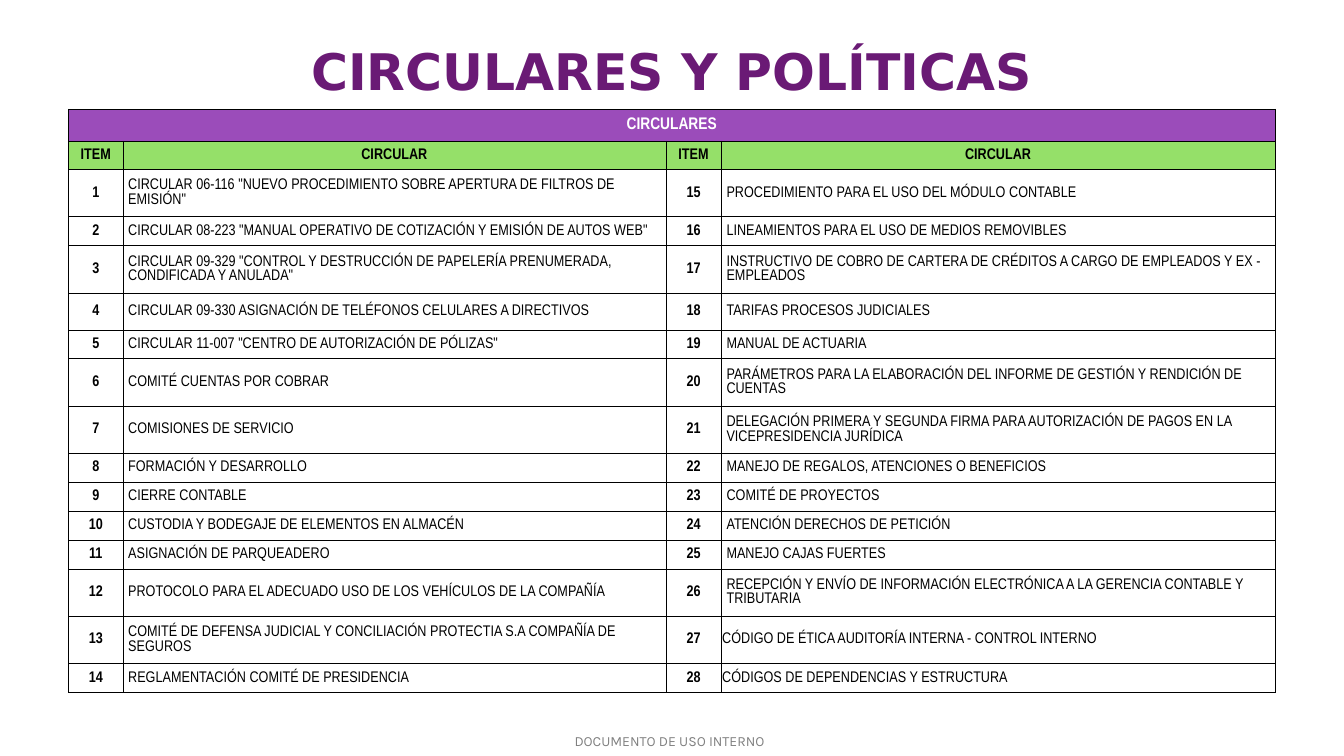
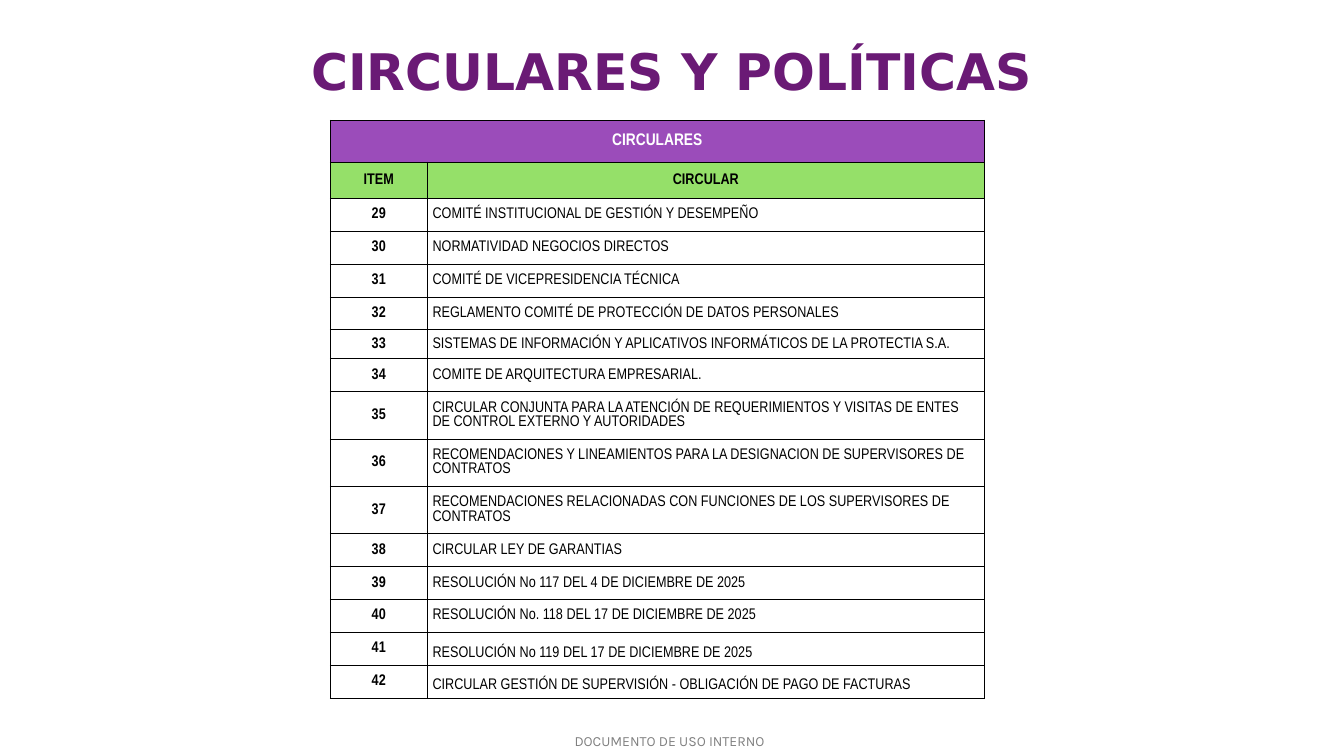
import pptx
import pptx.dml.color
import pptx.enum.text
import pptx.oxml
import pptx.oxml.ns
import pptx.util

Cm = pptx.util.Cm
Pt = pptx.util.Pt
RGBColor = pptx.dml.color.RGBColor
ALIGN = pptx.enum.text.PP_ALIGN
ANCHOR = pptx.enum.text.MSO_ANCHOR

# Shared colours, fonts and measures (centimetres)
PURPLE = RGBColor(0x6A, 0x1A, 0x75)
VIOLET = RGBColor(0x9B, 0x4C, 0xBA)
GREEN = RGBColor(0x95, 0xE0, 0x69)
GREY = RGBColor(0x80, 0x80, 0x80)
BLACK = RGBColor(0x00, 0x00, 0x00)
WHITE = RGBColor(0xFF, 0xFF, 0xFF)
TABLE_FONT = "Arial Narrow"
TIGHT_MARGIN, WIDE_MARGIN = 0.02, 0.13
SHORT, MEDIUM, ROOMY, TALL = 0.72, 0.83, 0.93, 1.19

# Content
TITLE = "CIRCULARES Y POLÍTICAS"
FOOTER = "DOCUMENTO DE USO INTERNO"
BANNER = "CIRCULARES"
HEADINGS = ("ITEM", "CIRCULAR")

CIRCULARS = [
    'CIRCULAR 06-116 "NUEVO PROCEDIMIENTO SOBRE APERTURA DE FILTROS DE EMISIÓN"',
    'CIRCULAR 08-223 "MANUAL OPERATIVO DE COTIZACIÓN Y EMISIÓN DE AUTOS WEB"',
    'CIRCULAR 09-329 "CONTROL Y DESTRUCCIÓN DE PAPELERÍA PRENUMERADA, CONDIFICADA Y ANULADA"',
    "CIRCULAR 09-330 ASIGNACIÓN DE TELÉFONOS CELULARES A DIRECTIVOS",
    'CIRCULAR 11-007 "CENTRO DE AUTORIZACIÓN DE PÓLIZAS"',
    "COMITÉ CUENTAS POR COBRAR",
    "COMISIONES DE SERVICIO",
    "FORMACIÓN Y DESARROLLO",
    "CIERRE CONTABLE",
    "CUSTODIA Y BODEGAJE DE ELEMENTOS EN ALMACÉN",
    "ASIGNACIÓN DE PARQUEADERO",
    "PROTOCOLO PARA EL ADECUADO USO DE LOS VEHÍCULOS DE LA COMPAÑÍA",
    "COMITÉ DE DEFENSA JUDICIAL Y CONCILIACIÓN PROTECTIA S.A COMPAÑÍA DE SEGUROS",
    "REGLAMENTACIÓN COMITÉ DE PRESIDENCIA",
    "PROCEDIMIENTO PARA EL USO DEL MÓDULO CONTABLE",
    "LINEAMIENTOS PARA EL USO DE MEDIOS REMOVIBLES",
    "INSTRUCTIVO DE COBRO DE CARTERA DE CRÉDITOS A CARGO DE EMPLEADOS Y EX - EMPLEADOS",
    "TARIFAS PROCESOS JUDICIALES",
    "MANUAL DE ACTUARIA",
    "PARÁMETROS PARA LA ELABORACIÓN DEL INFORME DE GESTIÓN Y RENDICIÓN DE CUENTAS",
    "DELEGACIÓN PRIMERA Y SEGUNDA FIRMA PARA AUTORIZACIÓN DE PAGOS EN LA VICEPRESIDENCIA JURÍDICA",
    "MANEJO DE REGALOS, ATENCIONES O BENEFICIOS",
    "COMITÉ DE PROYECTOS",
    "ATENCIÓN DERECHOS DE PETICIÓN",
    "MANEJO CAJAS FUERTES",
    "RECEPCIÓN Y ENVÍO DE INFORMACIÓN ELECTRÓNICA A LA GERENCIA CONTABLE Y TRIBUTARIA",
    "CÓDIGO DE ÉTICA AUDITORÍA INTERNA - CONTROL INTERNO",
    "CÓDIGOS DE DEPENDENCIAS Y ESTRUCTURA",
    "COMITÉ INSTITUCIONAL DE GESTIÓN Y DESEMPEÑO",
    "NORMATIVIDAD NEGOCIOS DIRECTOS",
    "COMITÉ DE VICEPRESIDENCIA TÉCNICA",
    "REGLAMENTO COMITÉ DE PROTECCIÓN DE DATOS PERSONALES",
    "SISTEMAS DE INFORMACIÓN Y APLICATIVOS INFORMÁTICOS DE LA PROTECTIA S.A.",
    "COMITE DE ARQUITECTURA EMPRESARIAL.",
    "CIRCULAR CONJUNTA PARA LA ATENCIÓN DE REQUERIMIENTOS Y VISITAS DE ENTES DE CONTROL EXTERNO Y AUTORIDADES",
    "RECOMENDACIONES Y LINEAMIENTOS PARA LA DESIGNACION DE SUPERVISORES DE CONTRATOS",
    "RECOMENDACIONES RELACIONADAS CON FUNCIONES DE LOS SUPERVISORES DE CONTRATOS",
    "CIRCULAR LEY DE GARANTIAS",
    "RESOLUCIÓN No 117 DEL 4 DE DICIEMBRE DE 2025",
    "RESOLUCIÓN No. 118 DEL 17 DE DICIEMBRE DE 2025",
    "RESOLUCIÓN No 119 DEL 17 DE DICIEMBRE DE 2025",
    "CIRCULAR GESTIÓN DE SUPERVISIÓN - OBLIGACIÓN DE PAGO DE FACTURAS",
]
TIGHT_ITEMS = (27, 28)
BOTTOM_ITEMS = (41, 42)

# One entry per slide: first and last item, table corner, columns and rows
TABLES = [
    {
        "items": (1, 28), "left": 1.73, "top": 2.75,
        "columns": (1.37, 13.68, 1.4, 13.95),
        "rows": [0.81, 0.71, TALL, SHORT, TALL, ROOMY, SHORT, TALL, TALL]
        + [SHORT] * 4 + [TALL, TALL, SHORT],
    },
    {
        "items": (29, 42), "left": 8.32, "top": 3.03,
        "columns": (2.45, 14.04),
        "rows": [1.05, 0.91] + [MEDIUM] * 4 + [SHORT, MEDIUM]
        + [TALL] * 3 + [MEDIUM] * 5,
    },
]


def style_text(paragraph, font_name, size, color, bold=False):
    for run in paragraph.runs:
        run.font.name = font_name
        run.font.size = Pt(size)
        run.font.bold = bold
        run.font.color.rgb = color


def add_text(slide, text, box, margin, align, *style):
    frame = slide.shapes.add_textbox(*map(Cm, box)).text_frame
    frame.word_wrap = True
    frame.margin_left = frame.margin_right = Cm(margin)
    frame.margin_top = frame.margin_bottom = Cm(margin)
    frame.text = text
    frame.paragraphs[0].alignment = align
    style_text(frame.paragraphs[0], *style)


def add_borders(cell):
    properties = cell._tc.get_or_add_tcPr()
    for side in ("lnL", "lnR", "lnT", "lnB"):
        properties.append(pptx.oxml.parse_xml(
            f'<a:{side} {pptx.oxml.ns.nsdecls("a")} w="{Pt(0.5)}">'
            f'<a:solidFill><a:srgbClr val="{BLACK}"/></a:solidFill></a:{side}>'))


def fill_cell(cell, text, size=11, color=BLACK, fill=None, bold=True,
              align=ALIGN.CENTER, margin=TIGHT_MARGIN, anchor=ANCHOR.MIDDLE):
    if fill is not None:
        cell.fill.solid()
        cell.fill.fore_color.rgb = fill
    cell.margin_left = cell.margin_right = Cm(margin)
    cell.margin_top = cell.margin_bottom = Cm(margin)
    cell.vertical_anchor = anchor
    cell.text = text
    paragraph = cell.text_frame.paragraphs[0]
    paragraph.alignment = align
    style_text(paragraph, TABLE_FONT, size, color, bold)


def add_circulars_table(slide, layout):
    columns, rows = layout["columns"], layout["rows"]
    table = slide.shapes.add_table(
        len(rows), len(columns), Cm(layout["left"]), Cm(layout["top"]),
        Cm(sum(columns)), Cm(sum(rows))).table
    table.first_row = table.horz_banding = False
    for column, width in zip(table.columns, columns):
        column.width = Cm(width)
    for row, height in zip(table.rows, rows):
        row.height = Cm(height)
    for cell in table.iter_cells():
        add_borders(cell)
        cell.fill.background()

    # Banner and headings
    table.cell(0, 0).merge(table.cell(0, len(columns) - 1))
    fill_cell(table.cell(0, 0), BANNER, 12, WHITE, VIOLET)
    for column in range(len(columns)):
        fill_cell(table.cell(1, column), HEADINGS[column % 2], fill=GREEN)

    # Items run down each pair of columns
    first, last = layout["items"]
    for item in range(first, last + 1):
        pair, row = divmod(item - first, len(rows) - 2)
        fill_cell(table.cell(row + 2, 2 * pair), str(item))
        fill_cell(
            table.cell(row + 2, 2 * pair + 1), CIRCULARS[item - 1],
            bold=False, align=ALIGN.LEFT,
            margin=TIGHT_MARGIN if item in TIGHT_ITEMS else WIDE_MARGIN,
            anchor=ANCHOR.BOTTOM if item in BOTTOM_ITEMS else ANCHOR.MIDDLE)


def main():
    presentation = pptx.Presentation()
    presentation.slide_width = Cm(33.87)
    presentation.slide_height = Cm(19.05)
    for layout in TABLES:
        slide = presentation.slides.add_slide(presentation.slide_layouts[6])
        add_text(slide, FOOTER, (14.48, 18.45, 4.95, 0.43), 0, ALIGN.LEFT,
                 "Karla", 10, GREY)
        add_text(slide, TITLE, (3.12, 0.81, 27.61, 1.93), 0.2, ALIGN.CENTER,
                 "DejaVu Sans", 36, PURPLE, True)
        add_circulars_table(slide, layout)
    presentation.save("out.pptx")


if __name__ == "__main__":
    main()
